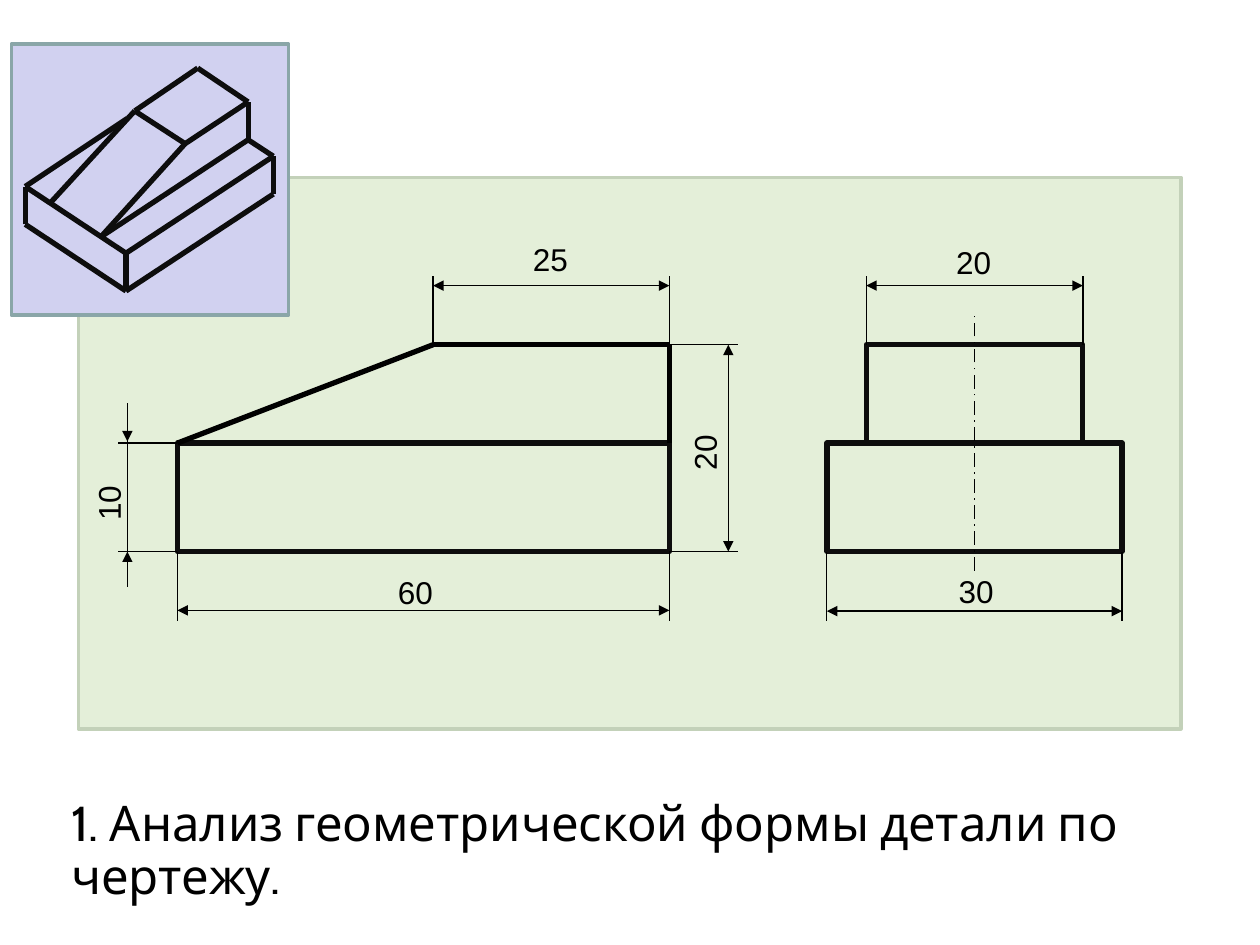
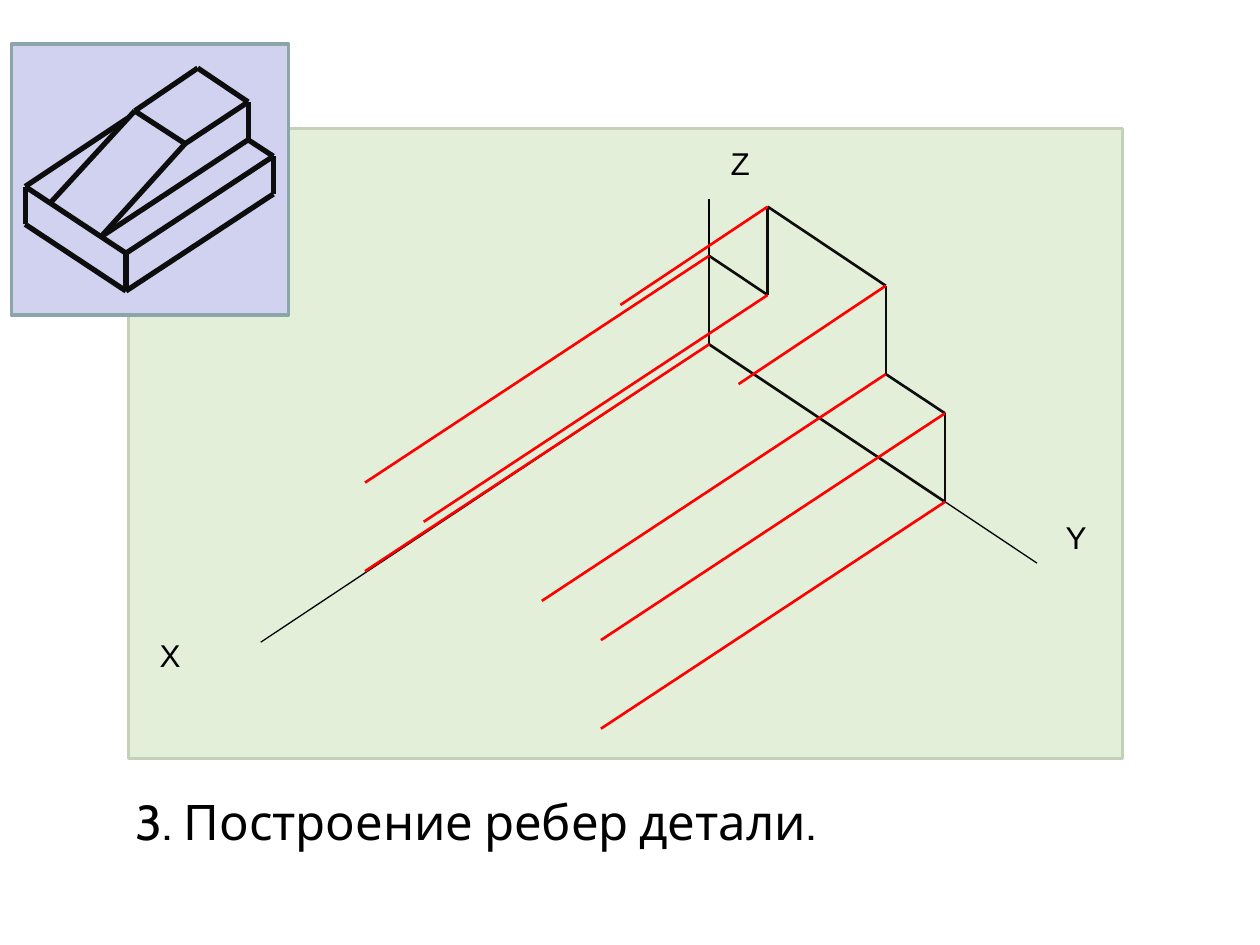
from itertools import pairwise

from lxml import etree
from pptx import Presentation
from pptx import util as u
from pptx.dml.color import RGBColor
from pptx.enum import dml, shapes, text
from pptx.oxml.ns import qn

BLACK = "000000"
EDGE = "0D0D0D"
RED = "FF0000"
PANEL_FILL, PANEL_LINE = "E4EFD9", "C3D1B9"
INSET_FILL, INSET_LINE = "D1D1F0", "8AA6A8"
THIN, MEDIUM, THICK = 0.75, 1.5, 3


def colour(value):
    return RGBColor.from_string(value)


def add_rect(page, left, top, width, height, fill, line, weight):
    rect = page.shapes.add_shape(
        shapes.MSO_SHAPE.RECTANGLE, u.Pt(left), u.Pt(top), u.Pt(width), u.Pt(height))
    rect.shadow.inherit = False
    if fill:
        rect.fill.solid()
        rect.fill.fore_color.rgb = colour(fill)
    else:
        rect.fill.background()
    rect.line.color.rgb = colour(line)
    rect.line.width = u.Pt(weight)


def add_panel(page, left, top, width, height):
    add_rect(page, left, top, width, height, PANEL_FILL, PANEL_LINE, 2)


def add_line(page, start, end, weight=THIN, line=BLACK, arrows=(), dash=None):
    connector = page.shapes.add_connector(
        shapes.MSO_CONNECTOR.STRAIGHT, *(u.Pt(value) for value in (*start, *end)))
    connector.line.color.rgb = colour(line)
    connector.line.width = u.Pt(weight)
    if dash:
        connector.line.dash_style = dash
    properties = connector._element.spPr
    for arrow in arrows:
        etree.SubElement(properties.find(qn("a:ln")), qn(f"a:{arrow}"), type="triangle")
    etree.SubElement(properties, qn("a:effectLst"))


def add_path(page, points, weight, line):
    for start, end in pairwise(points):
        add_line(page, start, end, weight, line)


def add_dimension(page, start, end):
    add_line(page, start, end, arrows=("headEnd", "tailEnd"))


def add_text(page, words, left, top, width, height, size, font):
    box = page.shapes.add_textbox(u.Pt(left), u.Pt(top), u.Pt(width), u.Pt(height))
    box.text_frame.text = words
    para = box.text_frame.paragraphs[0]
    span = para.runs[0]
    span.font.size = u.Pt(size)
    span.font.name = font
    span.font.color.rgb = colour(BLACK)
    return box


def add_title(page, words, left, top, width):
    box = add_text(page, words, left, top, width, 62, 28, "Cabin")
    box.text_frame.word_wrap = True
    box.text_frame.vertical_anchor = text.MSO_ANCHOR.MIDDLE
    box.text_frame.paragraphs[0].line_spacing = 0.9


def add_label(page, words, left, top, width=34.6, rotation=0):
    box = add_text(page, words, left, top, width, 28.8, 18, "Arial")
    box.text_frame.word_wrap = False
    box.rotation = rotation


def add_part_inset(page):
    add_rect(page, 6.5, 25.2, 158.4, 154.8, INSET_FILL, INSET_LINE, 2)
    left_top, left_bottom = (14.4, 106.6), (14.4, 128.2)
    front_top, front_bottom = (72, 144.7), (72, 166.3)
    right_top, right_bottom = (156.2, 89.3), (156.2, 110.9)
    ridge_left, ridge_front = (77, 63.4), (105.8, 82.1)
    ridge_back, ridge_right = (113, 38.9), (141.8, 58.3)
    step = (141.8, 79.9)
    slope_left, slope_right = (28.8, 115.9), (57.6, 135.4)
    paths = [
        [left_top, front_top, right_top, right_bottom, front_bottom, left_bottom, left_top],
        [front_top, front_bottom],
        [left_top, (72.7, 67.7)],
        [slope_left, ridge_left, ridge_back, ridge_right, ridge_front, ridge_left],
        [ridge_front, slope_right, step, ridge_right],
        [step, right_top],
    ]
    for points in paths:
        add_path(page, points, THICK, EDGE)


def add_drawing_slide(page):
    add_panel(page, 44.8, 101.4, 630, 315.2)
    add_title(page, "1. Анализ геометрической формы детали по чертежу.", 33.8, 455.8, 648)

    top, shelf, base = 197, 253.2, 315.2
    front_left, ridge, front_right = 101.4, 247.5, 382.5
    side_left, side_right = 472.5, 641.2
    upper_left, upper_right = 495, 618.8
    axis = (side_left + side_right) / 2

    for left, right, upper, lower in [
        (front_left, front_right, shelf, base),
        (side_left, side_right, shelf, base),
        (upper_left, upper_right, top, shelf),
    ]:
        add_rect(page, left, upper, right - left, lower - upper, None, EDGE, THICK)
    add_path(page, [(front_right, shelf), (front_right, top), (ridge, top),
                    (front_left, shelf)], THICK, BLACK)
    add_line(page, (axis, 326.2), (axis, 180), 1, dash=dml.MSO_LINE.LONG_DASH_DOT)

    for x in (ridge, front_right, upper_left, upper_right):
        add_line(page, (x, top), (x, 157.7))
    for x in (front_left, front_right, side_left, side_right):
        add_line(page, (x, base), (x, 354.6))
    for y in (shelf, base):
        add_line(page, (front_left, y), (67.7, y))
    for y in (top, base):
        add_line(page, (front_right, y), (421.9, y))

    for left, right, y in [
        (ridge, front_right, 163.2),
        (upper_left, upper_right, 163.2),
        (side_left, side_right, 349.2),
        (front_left, front_right, 348.8),
    ]:
        add_dimension(page, (left, y), (right, y))
    add_dimension(page, (416.2, top), (416.2, base))

    height_x = 72.8
    add_line(page, (height_x, 230.4), (height_x, 335.5))
    for tip, end in [(shelf - 1, 241.2), (base, 326.9)]:
        add_line(page, (height_x, tip), (height_x, end), arrows=["headEnd"])

    for words, left, label_top, rotation in [
        ("60", 220.3, 324, 0),
        ("25", 297.4, 133.9, 0),
        ("20", 385.2, 244.1, 270),
        ("10", 44.6, 272.9, 270),
        ("20", 539.3, 135.4, 0),
        ("30", 540.7, 323.3, 0),
    ]:
        add_label(page, words, left, label_top, rotation=rotation)
    add_part_inset(page)


def add_edges_slide(page):
    add_title(page, "3. Построение ребер детали.", 70.6, 440, 578)
    add_panel(page, 73.4, 73.4, 568, 360)

    origin = (405.2, 196.8)
    for end in [(405.2, 113.8), (149, 367), (592.6, 321.8)]:
        add_line(page, origin, end)
    for words, left, top in [("Z", 410.4, 78.5), ("Y", 601.9, 292.3), ("Х", 84.2, 360)]:
        add_label(page, words, left, top, 26.6)

    ridge = [(506.2, 163.3), (438.7, 118.1)]
    lower = [(438.7, 168.6), (405.2, 146.2), origin, (540, 286.8), (540, 236.2), (506.2, 213.8)]
    add_path(page, ridge + lower + ridge[:1], MEDIUM, EDGE)
    for corners, run, drop in [(lower, 196.6, 129.6), (ridge, 84.2, 56.2)]:
        for x, y in corners:
            add_line(page, (x, y), (x - run, y + drop), MEDIUM, RED)
    add_part_inset(page)


def main():
    deck = Presentation()
    deck.slide_width, deck.slide_height = u.Pt(720), u.Pt(540)
    for build in (add_drawing_slide, add_edges_slide):
        build(deck.slides.add_slide(deck.slide_layouts[6]))
    deck.save("out.pptx")


if __name__ == "__main__":
    main()
